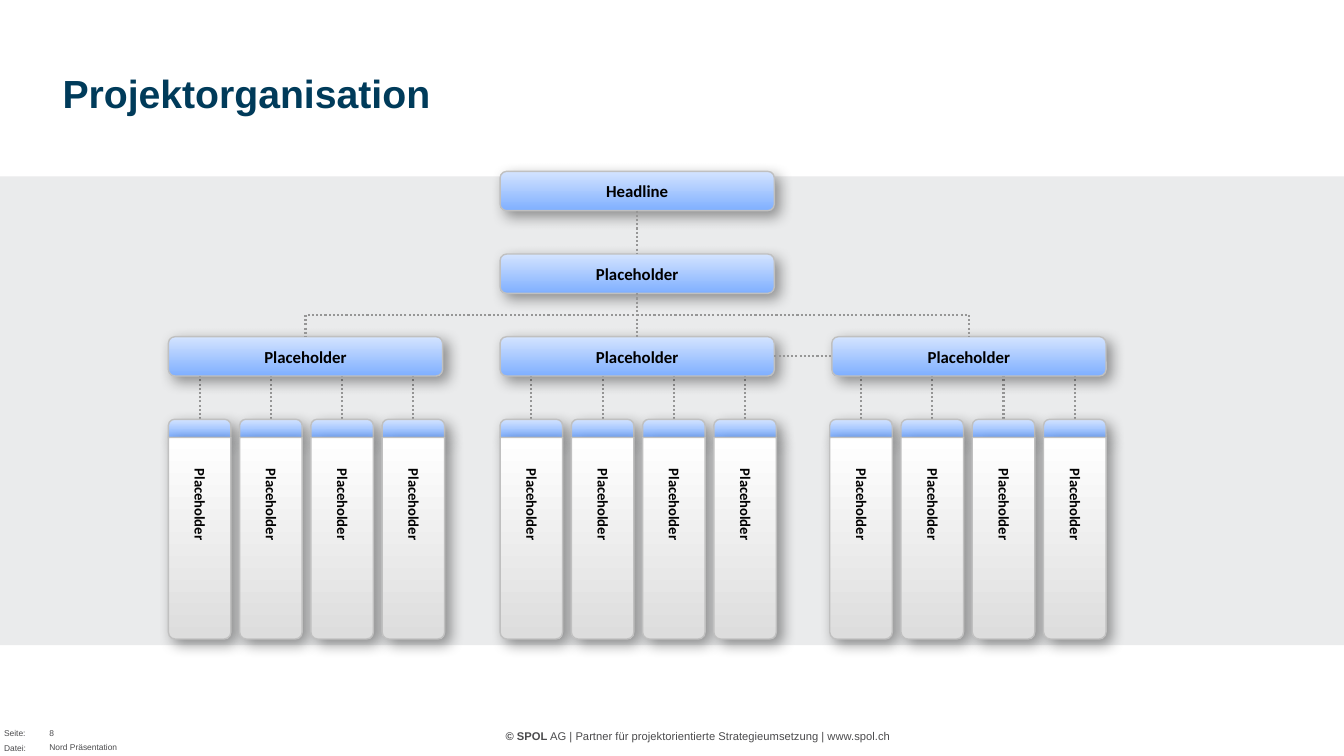
import pptx
import pptx.util
import pptx.dml.color
import pptx.enum.dml
import pptx.enum.shapes
import pptx.enum.text
import lxml.etree

Inches = pptx.util.Inches
Pt = pptx.util.Pt
RGBColor = pptx.dml.color.RGBColor
Shape = pptx.enum.shapes.MSO_SHAPE
Connector = pptx.enum.shapes.MSO_CONNECTOR
Align = pptx.enum.text.PP_ALIGN
Anchor = pptx.enum.text.MSO_ANCHOR

NAVY = RGBColor(0x00, 0x3B, 0x5A)
BAND_GREY = RGBColor(0xEA, 0xEB, 0xEC)
FOOTER_GREY = RGBColor(0x4B, 0x4B, 0x4D)
LIGHT_BLUE = RGBColor(0xD4, 0xE4, 0xFF)
BLUE = RGBColor(0x7F, 0xAF, 0xFF)
WHITE = RGBColor(0xFF, 0xFF, 0xFF)
SILVER = RGBColor(0xDD, 0xDD, 0xDD)
BORDER_GREY = RGBColor(0xC0, 0xC0, 0xC0)
LINE_GREY = RGBColor(0x96, 0x96, 0x96)
BLACK = RGBColor(0x00, 0x00, 0x00)

DRAWING = "http://schemas.openxmlformats.org/drawingml/2006/main"
SHADOW = (
    f'<a:effectLst xmlns:a="{DRAWING}">'
    '<a:outerShdw blurRad="127000" dist="63500" dir="2700000" algn="tl" rotWithShape="0">'
    '<a:srgbClr val="000000"><a:alpha val="40000"/></a:srgbClr>'
    '</a:outerShdw></a:effectLst>'
)

BOX_WIDTH, BOX_HEIGHT = 2.72, 0.39
HEADLINE_TOP, LEAD_TOP, TEAM_TOP = 1.7, 2.52, 3.34
CAP_TOP, CAP_HEIGHT = 4.16, 0.18
COLUMN_WIDTH, COLUMN_HEIGHT = 0.62, 2
COLUMN_STEP = 2.12 / 3
MIDDLE_LEFT = 4.96
MIDDLE_X = MIDDLE_LEFT + BOX_WIDTH / 2

deck = pptx.Presentation()
deck.slide_width, deck.slide_height = Inches(13.33), Inches(7.5)
page = deck.slides.add_slide(deck.slide_layouts[5])


def add_panel(kind, left, top, width, height, colors, text="", size=12):
    """Add a bordered, shadowed shape that shades from top to bottom."""
    panel = page.shapes.add_shape(
        kind, Inches(left), Inches(top), Inches(width), Inches(height))
    panel.fill.gradient()
    panel.fill.gradient_angle = 270
    for stop, color in zip(panel.fill.gradient_stops, colors):
        stop.color.rgb = color
    panel.line.color.rgb = BORDER_GREY
    panel.line.width = Pt(1)
    panel.element.spPr.append(lxml.etree.fromstring(SHADOW))
    frame = panel.text_frame
    frame.margin_left = frame.margin_top = frame.margin_right = frame.margin_bottom = 0
    frame.vertical_anchor = Anchor.MIDDLE
    if text:
        para = frame.paragraphs[0]
        para.text = text
        para.alignment = Align.CENTER
        para.font.name, para.font.size, para.font.bold = "Calibri", Pt(size), True
        para.font.color.rgb = BLACK
    return panel


def add_dotted(kind, x1, y1, x2, y2):
    """Add a dotted grey connector without a shadow."""
    line = page.shapes.add_connector(kind, Inches(x1), Inches(y1), Inches(x2), Inches(y2))
    line.line.color.rgb = LINE_GREY
    line.line.width = Pt(1.5)
    line.line.dash_style = pptx.enum.dml.MSO_LINE.ROUND_DOT
    lxml.etree.SubElement(line.element.spPr, f"{{{DRAWING}}}effectLst")
    return line


# Grey band behind the chart, moved below the title
band = page.shapes.add_shape(
    Shape.RECTANGLE, 0, Inches(1.75), Inches(13.33), Inches(4.65))
band.shadow.inherit = False
band.fill.solid()
band.fill.fore_color.rgb = BAND_GREY
band.line.fill.background()
page.shapes.title.element.addprevious(band.element)

# Title
title = page.shapes.title
title.left, title.top = Inches(0.52), Inches(0.3)
title.width, title.height = Inches(9.85), Inches(1.25)
title.text_frame.text = "Projektorganisation"
title.text_frame.vertical_anchor = Anchor.MIDDLE
title.text_frame.margin_top = title.text_frame.margin_bottom = 0
para = title.text_frame.paragraphs[0]
para.alignment = Align.LEFT
para.font.name, para.font.size, para.font.bold = "Arial", Pt(28), True
para.font.color.rgb = NAVY

# Footer: text pieces, place, size, alignment and anchor
footers = [
    (["© SPOL", " AG | Partner für projektorientierte Strategieumsetzung | www.spol.ch"],
     3.41, 7.13, 7.03, 0.24, 8, Align.CENTER, Anchor.BOTTOM),
    (["Datei:"], 0.04, 7.37, 0.29, 0.1, 6, Align.LEFT, Anchor.TOP),
    (["Seite:"], 0.04, 7.22, 0.28, 0.1, 6, Align.LEFT, Anchor.TOP),
    (["8"], 0.49, 7.2, 0.47, 0.12, 6, Align.LEFT, Anchor.BOTTOM),
    (["Nord Präsentation"], 0.49, 7.29, 4.39, 0.17, 6, Align.LEFT, Anchor.BOTTOM),
]
for pieces, left, top, width, height, size, align, anchor in footers:
    box = page.shapes.add_textbox(Inches(left), Inches(top), Inches(width), Inches(height))
    frame = box.text_frame
    frame.word_wrap = True
    frame.margin_left = frame.margin_top = frame.margin_right = frame.margin_bottom = 0
    frame.vertical_anchor = anchor
    para = frame.paragraphs[0]
    para.alignment = align
    para.font.name, para.font.size = "Arial", Pt(size)
    para.font.color.rgb = FOOTER_GREY
    for piece in pieces:
        span = para.add_run()
        span.text = piece
        if piece.startswith("©"):
            span.font.bold = True

# Two top levels
headline, lead = [
    add_panel(Shape.ROUNDED_RECTANGLE, MIDDLE_LEFT, top, BOX_WIDTH, BOX_HEIGHT,
              (LIGHT_BLUE, BLUE), text)
    for text, top in (("Headline", HEADLINE_TOP), ("Placeholder", LEAD_TOP))
]

# Three teams, each with four columns
teams = []
for team_left, columns_left in ((1.67, 1.67), (MIDDLE_LEFT, 4.96), (8.25, 8.23)):
    lefts = [columns_left + number * COLUMN_STEP for number in range(4)]
    for left in lefts:
        center = left + COLUMN_WIDTH / 2
        add_dotted(Connector.STRAIGHT, center, CAP_TOP, center, TEAM_TOP + BOX_HEIGHT)
    for left in lefts:
        cap = add_panel(Shape.ROUND_2_SAME_RECTANGLE, left, CAP_TOP, COLUMN_WIDTH,
                        CAP_HEIGHT, (LIGHT_BLUE, BLUE))
        cap.adjustments[0] = 0.34
    for left in lefts:
        column = add_panel(Shape.ROUND_2_SAME_RECTANGLE, left, CAP_TOP + CAP_HEIGHT,
                           COLUMN_WIDTH, COLUMN_HEIGHT, (WHITE, SILVER),
                           "Placeholder", 10.5)
        column.adjustments[0], column.adjustments[1] = 0, 0.11
        column.text_frame.margin_top = Inches(0.31)
        column.text_frame._txBody.bodyPr.set("vert", "vert")
        para = column.text_frame.paragraphs[0]
        para.alignment = Align.LEFT
        para.line_spacing = 0.95
        para.space_after = Pt(8)
    teams.append(add_panel(Shape.ROUNDED_RECTANGLE, team_left, TEAM_TOP, BOX_WIDTH,
                           BOX_HEIGHT, (LIGHT_BLUE, BLUE), "Placeholder"))

# Straight links between boxes
links = [(headline, 2, lead, 0), (lead, 2, teams[1], 0), (teams[1], 3, teams[2], 1)]
for start, start_side, end, end_side in links:
    link = add_dotted(Connector.STRAIGHT, 0, 0, 1, 1)
    link.begin_connect(start, start_side)
    link.end_connect(end, end_side)

# Elbow links to the outer teams, turned so that they leave downwards
drop = TEAM_TOP - LEAD_TOP - BOX_HEIGHT
middle_y = TEAM_TOP - drop / 2
for team_x, side, turn in ((3.03, -1, 90), (9.61, 1, 270)):
    center_x = (MIDDLE_X + team_x) / 2
    reach = abs(team_x - MIDDLE_X)
    elbow = add_dotted(Connector.ELBOW,
                       center_x + side * drop / 2, middle_y - reach / 2,
                       center_x - side * drop / 2, middle_y + reach / 2)
    elbow.element.spPr.xfrm.set("rot", str(turn * 60000))

deck.save("out.pptx")
